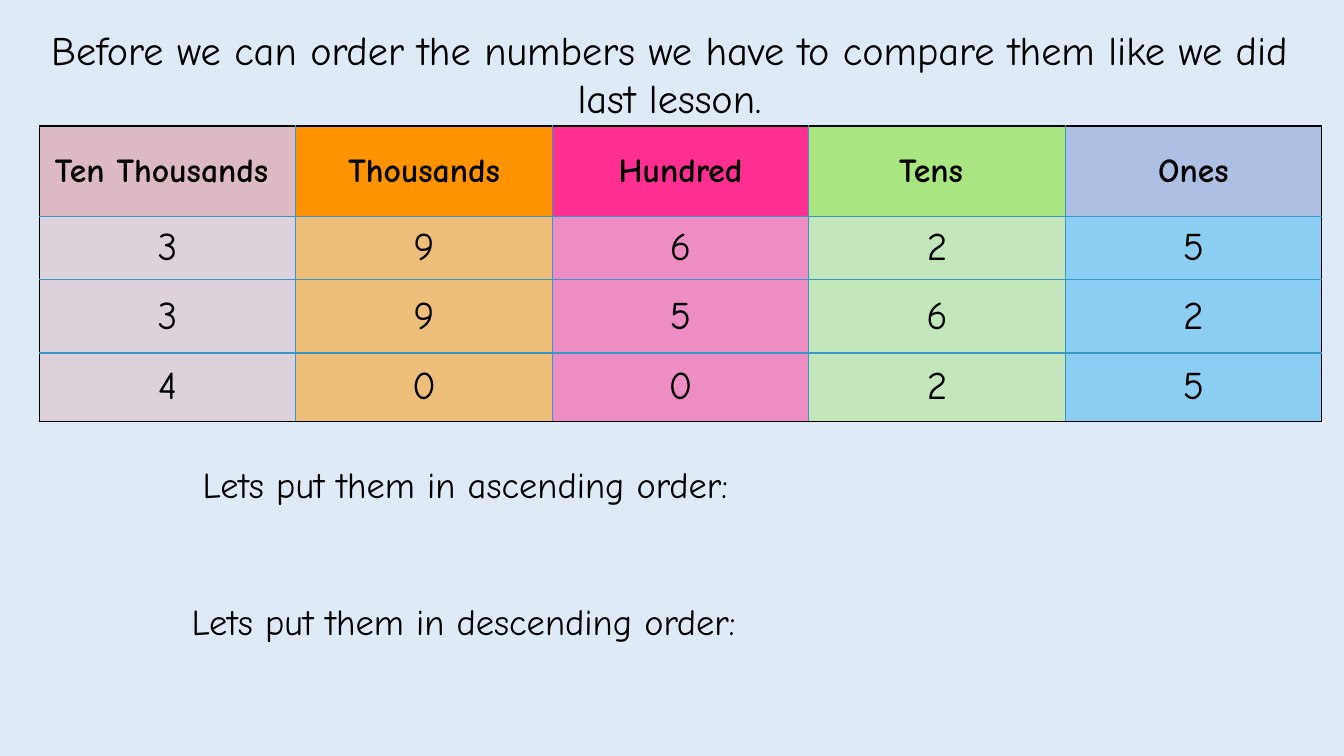
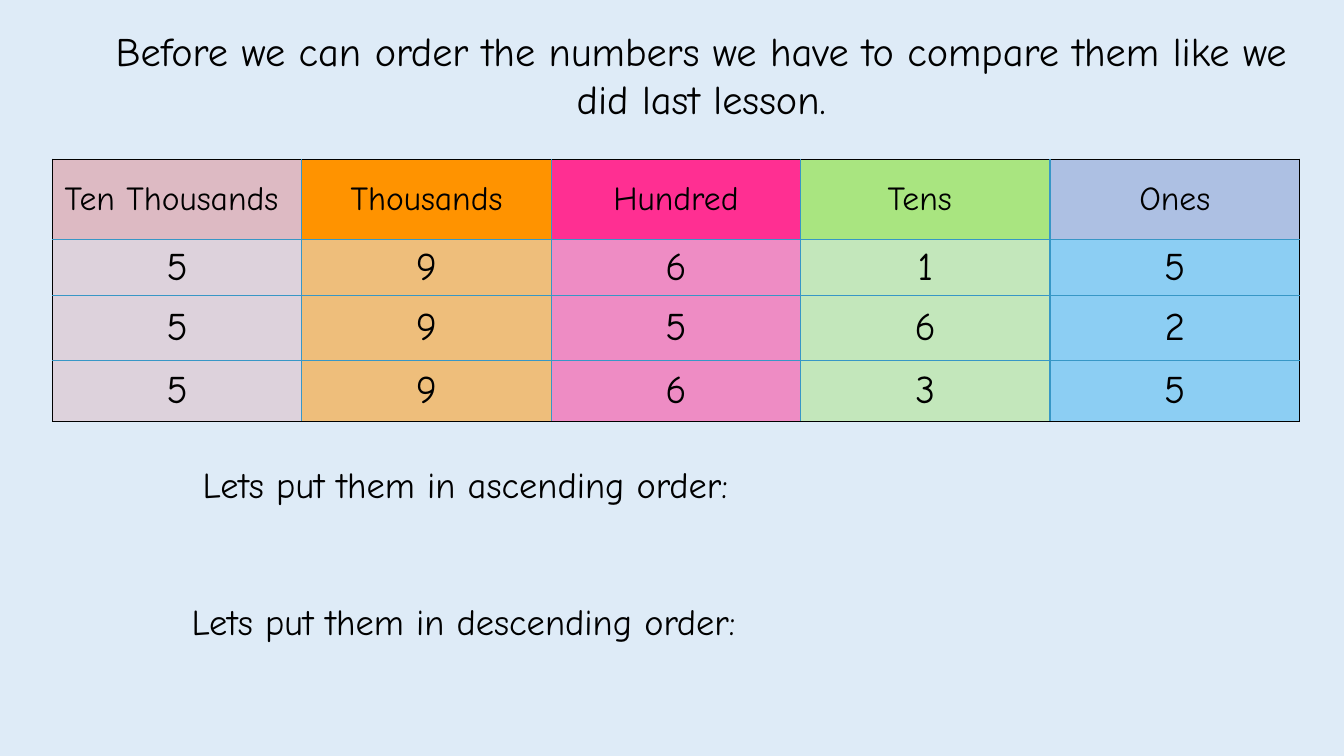
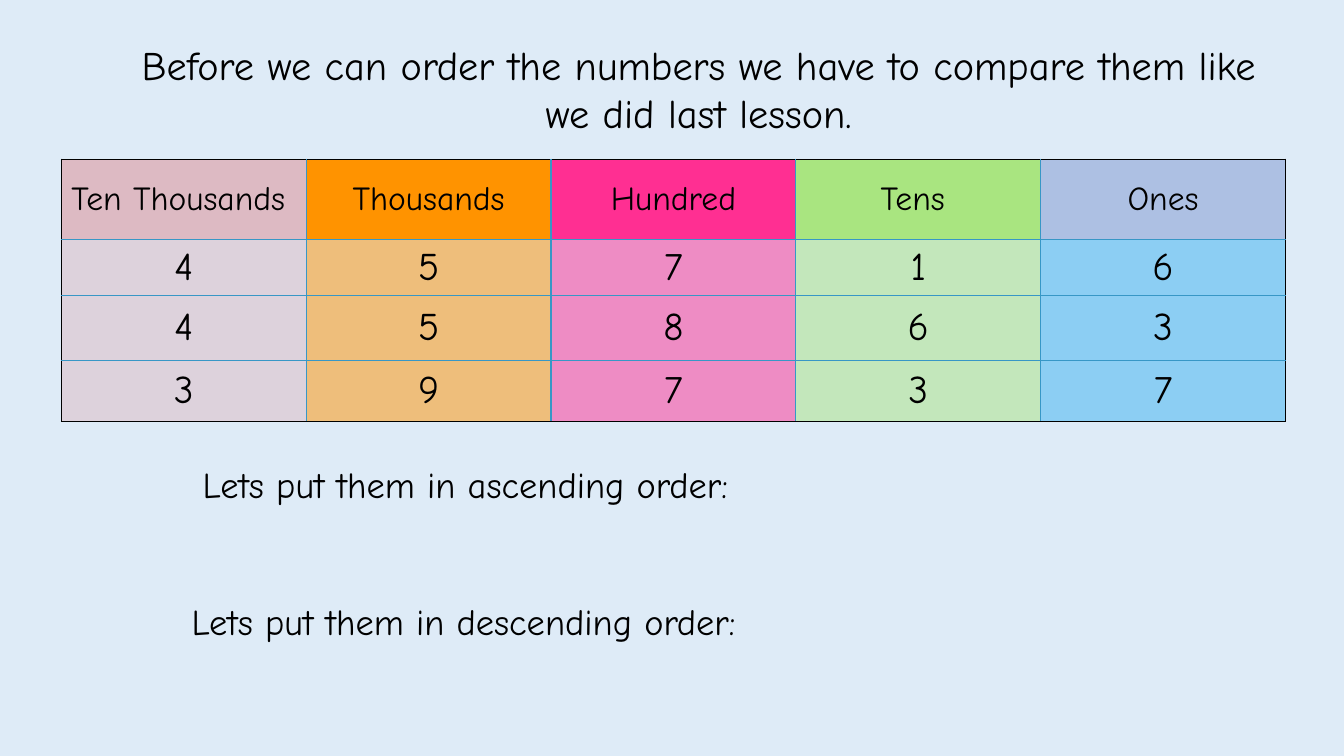
from dataclasses import dataclass

from lxml.etree import SubElement
from pptx import Presentation
from pptx.dml.color import RGBColor
from pptx.enum.text import MSO_ANCHOR as Anchor, MSO_AUTO_SIZE as AutoSize, PP_ALIGN as Align
from pptx.oxml.ns import qn
from pptx.util import Inches, Pt

# Shared style
FONT = "Comic Neue"
BACKGROUND, BLACK, GRID = "DEEBF7", "000000", "3797C6"
INSET = Inches(0.04)
ROW_WEIGHTS = (0.9, 0.63, 0.73, 0.68)
TITLE = "Before we can order the numbers we have to compare them like we did last lesson."


@dataclass(frozen=True)
class Place:
    name: str
    header: str
    body: str
    opacity: int = 50


@dataclass(frozen=True)
class Box:
    left: float
    top: float
    width: float
    height: float

    def emu(self) -> list[int]:
        return [Inches(v) for v in (self.left, self.top, self.width, self.height)]


@dataclass(frozen=True)
class Lesson:
    numbers: tuple[str, ...]
    title: Box
    table: Box
    bold_header: bool = False


PLACES = (
    Place("Ten Thousands ", "DDBAC3", "DDBAC3"),
    Place("Thousands", "FF9300", "FF9300"),
    Place("Hundred", "FF2F92", "FF2F92"),
    Place("Tens ", "A9E580", "A9E580"),
    Place("Ones", "ADC0E3", "13A4EE", 40),
)
PROMPTS = (
    ("Lets put them in ascending order:", Box(1.97, 4.54, 5.79, 0.52)),
    ("Lets put them in descending order:", Box(1.86, 5.9, 6.02, 0.52)),
)
LESSONS = (
    Lesson(("39625", "39562", "40025"), Box(-0.33, 0.2, 13.44, 1.05),
           Box(0.39, 1.25, 12.72, 2.93), bold_header=True),
    Lesson(("59615", "59562", "59635"), Box(0.52, 0.21, 12.37, 1.05),
           Box(0.52, 1.58, 12.37, 2.6)),
    Lesson(("45716", "45863", "39737"), Box(0.61, 0.35, 12.14, 1.05),
           Box(0.61, 1.58, 12.14, 2.6)),
)


def rgb(color: str) -> RGBColor:
    return RGBColor.from_string(color)


def write(tf, text: str, *, size: float, bold: bool = False, align=Align.LEFT,
          level: int = 0, indent: float = 0) -> None:
    """Put one formatted paragraph in a text frame."""
    p = tf.paragraphs[0]
    p.alignment, p.level = align, level
    if indent:
        pPr = p._p.get_or_add_pPr()
        pPr.set("marL", str(Inches(indent)))
        pPr.set("indent", "0")
    r = p.add_run()
    r.text = text
    r.font.name, r.font.size, r.font.bold = FONT, Pt(size), bold
    r.font.color.rgb = rgb(BLACK)


def add_text(s, box: Box, text: str, *, wrap: bool = False, **fmt) -> None:
    tf = s.shapes.add_textbox(*box.emu()).text_frame
    tf.word_wrap, tf.auto_size = wrap, AutoSize.SHAPE_TO_FIT_TEXT
    tf.vertical_anchor = Anchor.MIDDLE
    tf.margin_left = tf.margin_right = tf.margin_top = tf.margin_bottom = INSET
    write(tf, text, **fmt)


def style_cell(cell, color: str, opacity: int, edges: dict[str, bool]) -> None:
    """Set borders (black on the outside) and a fill that may be transparent."""
    cell.vertical_anchor = Anchor.MIDDLE
    cell.margin_left = cell.margin_right = cell.margin_top = cell.margin_bottom = INSET
    tcPr = cell._tc.get_or_add_tcPr()
    for side, outer in edges.items():
        ln = SubElement(tcPr, qn(f"a:ln{side}"), w=str(Pt(1)))
        fill = SubElement(ln, qn("a:solidFill"))
        SubElement(fill, qn("a:srgbClr"), val=BLACK if outer else GRID)
    cell.fill.solid()
    cell.fill.fore_color.rgb = rgb(color)
    if opacity < 100:
        clr = tcPr.find(qn("a:solidFill")).find(qn("a:srgbClr"))
        SubElement(clr, qn("a:alpha"), val=str(opacity * 1000))


def add_place_table(s, lesson: Lesson) -> None:
    n_rows, n_cols = len(lesson.numbers) + 1, len(PLACES)
    table = s.shapes.add_table(n_rows, n_cols, *lesson.table.emu()).table
    for col in table.columns:
        col.width = Inches(lesson.table.width / n_cols)
    for row, weight in zip(table.rows, ROW_WEIGHTS):
        row.height = Inches(lesson.table.height * weight / sum(ROW_WEIGHTS))

    for i in range(n_rows):
        for j, place in enumerate(PLACES):
            cell = table.cell(i, j)
            edges = {"L": j == 0, "R": j == n_cols - 1, "T": i == 0, "B": i == n_rows - 1}
            if i == 0:
                style_cell(cell, place.header, 100, edges)
                write(cell.text_frame, place.name, size=24,
                      bold=lesson.bold_header, align=Align.CENTER)
            else:
                style_cell(cell, place.body, place.opacity, edges)
                write(cell.text_frame, lesson.numbers[i - 1][j], size=28, align=Align.CENTER)


def add_lesson(prs, lesson: Lesson) -> None:
    s = prs.slides.add_slide(prs.slide_layouts[6])
    s.background.fill.solid()
    s.background.fill.fore_color.rgb = rgb(BACKGROUND)
    add_place_table(s, lesson)
    add_text(s, lesson.title, TITLE, wrap=True, size=28.8,
             align=Align.CENTER, level=1, indent=0.5)
    for text, box in PROMPTS:
        add_text(s, box, text, size=26)


def main() -> None:
    prs = Presentation()
    prs.slide_width, prs.slide_height = Inches(13.33), Inches(7.5)
    for lesson in LESSONS:
        add_lesson(prs, lesson)
    prs.save("out.pptx")


if __name__ == "__main__":
    main()
